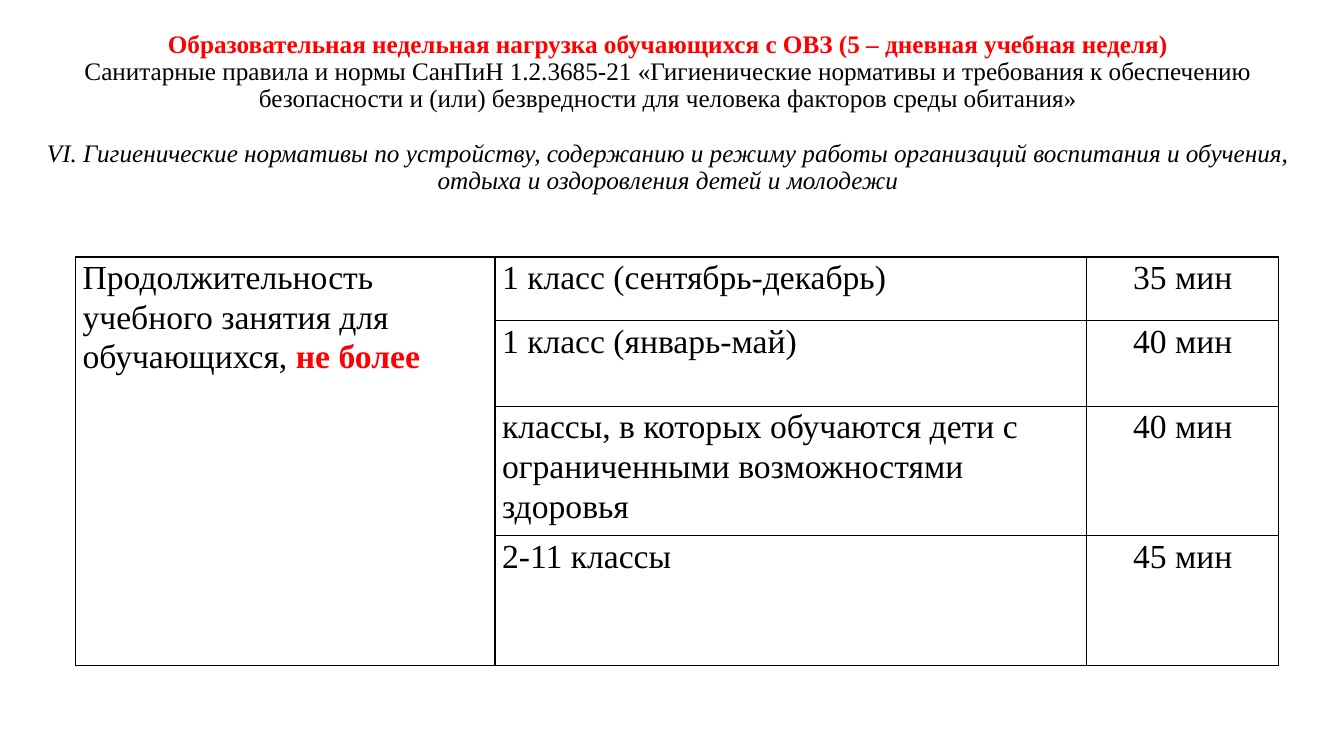
from dataclasses import dataclass

from lxml import etree
from pptx import Presentation
from pptx.dml.color import RGBColor
from pptx.enum.text import MSO_ANCHOR, PP_ALIGN
from pptx.oxml.ns import qn
from pptx.util import Inches, Pt

LEFT, CENTER = PP_ALIGN.LEFT, PP_ALIGN.CENTER
TOP, MIDDLE = MSO_ANCHOR.TOP, MSO_ANCHOR.MIDDLE
FONT = "Times New Roman"
BLACK, RED = "000000", "FF0000"


@dataclass
class Heading:
    text: str
    color: str = BLACK
    bold: bool = False
    italic: bool = False
    before: float = 0


@dataclass
class Lesson:
    grade: str
    duration: str
    height: float


HEADINGS = [
    Heading("Образовательная недельная нагрузка обучающихся с ОВЗ "
            "(5 – дневная учебная неделя)", color=RED, bold=True),
    Heading("Санитарные правила и нормы СанПиН 1.2.3685-21 «Гигиенические нормативы "
            "и требования к обеспечению безопасности и (или) безвредности для человека "
            "факторов среды обитания»"),
    Heading("VI. Гигиенические нормативы по устройству, содержанию и режиму работы "
            "организаций воспитания и обучения, отдыха и оздоровления детей и молодежи",
            italic=True, before=19.5),
]
LESSONS = [
    Lesson("1 класс (сентябрь-декабрь)", "35 мин", 0.63),
    Lesson("1 класс (январь-май)", "40 мин", 0.85),
    Lesson("классы, в которых обучаются дети с ограниченными возможностями здоровья",
           "40 мин", 1.25),
    Lesson("2-11 классы", "45 мин", 1.18),
]
COL_WIDTHS = [4.16, 5.87, 1.9]


def rgb(color: str) -> RGBColor:
    return RGBColor.from_string(color)


def add_text(p, text: str, *, size: float = 24, color: str = BLACK, bold: bool = False,
             italic: bool = False, align=LEFT, spacing: float = 1.07,
             before: float = 0) -> None:
    p.alignment = align
    p.line_spacing = spacing
    p.space_before = Pt(before)
    r = p.add_run()
    r.text = text
    r.font.name = FONT
    r.font.size = Pt(size)
    r.font.bold = bold
    r.font.italic = italic
    r.font.color.rgb = rgb(color)


def style_cell(cell) -> None:
    cell.margin_left = cell.margin_right = Inches(0.07)
    cell.margin_top = cell.margin_bottom = 0
    cell.vertical_anchor = TOP
    tc_pr = cell._tc.get_or_add_tcPr()
    for side in ("lnL", "lnR", "lnT", "lnB"):
        ln = etree.SubElement(tc_pr, qn(f"a:{side}"), w=str(Pt(1)))
        fill = etree.SubElement(ln, qn("a:solidFill"))
        etree.SubElement(fill, qn("a:srgbClr"), val=BLACK)
    cell.fill.background()


def add_title(slide) -> None:
    sp = slide.shapes.add_textbox(Inches(0.27), Inches(0.4), Inches(12.71), Inches(1.45))
    tf = sp.text_frame
    tf.word_wrap = True
    tf.vertical_anchor = MIDDLE
    for i, h in enumerate(HEADINGS):
        p = tf.add_paragraph() if i else tf.paragraphs[0]
        add_text(p, h.text, size=18, color=h.color, bold=h.bold, italic=h.italic,
                 align=CENTER, spacing=0.9, before=h.before)


def add_lessons(slide) -> None:
    height = sum(lesson.height for lesson in LESSONS)
    table = slide.shapes.add_table(len(LESSONS), len(COL_WIDTHS), Inches(0.75), Inches(2.55),
                                   Inches(sum(COL_WIDTHS)), Inches(height)).table
    table.first_row = table.horz_banding = False
    for col, width in zip(table.columns, COL_WIDTHS):
        col.width = Inches(width)
    for cell in table.iter_cells():
        style_cell(cell)
    table.cell(0, 0).merge(table.cell(len(LESSONS) - 1, 0))
    p = table.cell(0, 0).text_frame.paragraphs[0]
    add_text(p, "Продолжительность учебного занятия для обучающихся, ")
    add_text(p, "не более", color=RED, bold=True)
    for i, lesson in enumerate(LESSONS):
        table.rows[i].height = Inches(lesson.height)
        add_text(table.cell(i, 1).text_frame.paragraphs[0], lesson.grade)
        add_text(table.cell(i, 2).text_frame.paragraphs[0], lesson.duration, align=CENTER)


def main() -> None:
    prs = Presentation()
    prs.slide_width, prs.slide_height = Inches(13.33), Inches(7.5)
    slide = prs.slides.add_slide(prs.slide_layouts[6])
    add_title(slide)
    add_lessons(slide)
    prs.save("out.pptx")


if __name__ == "__main__":
    main()
